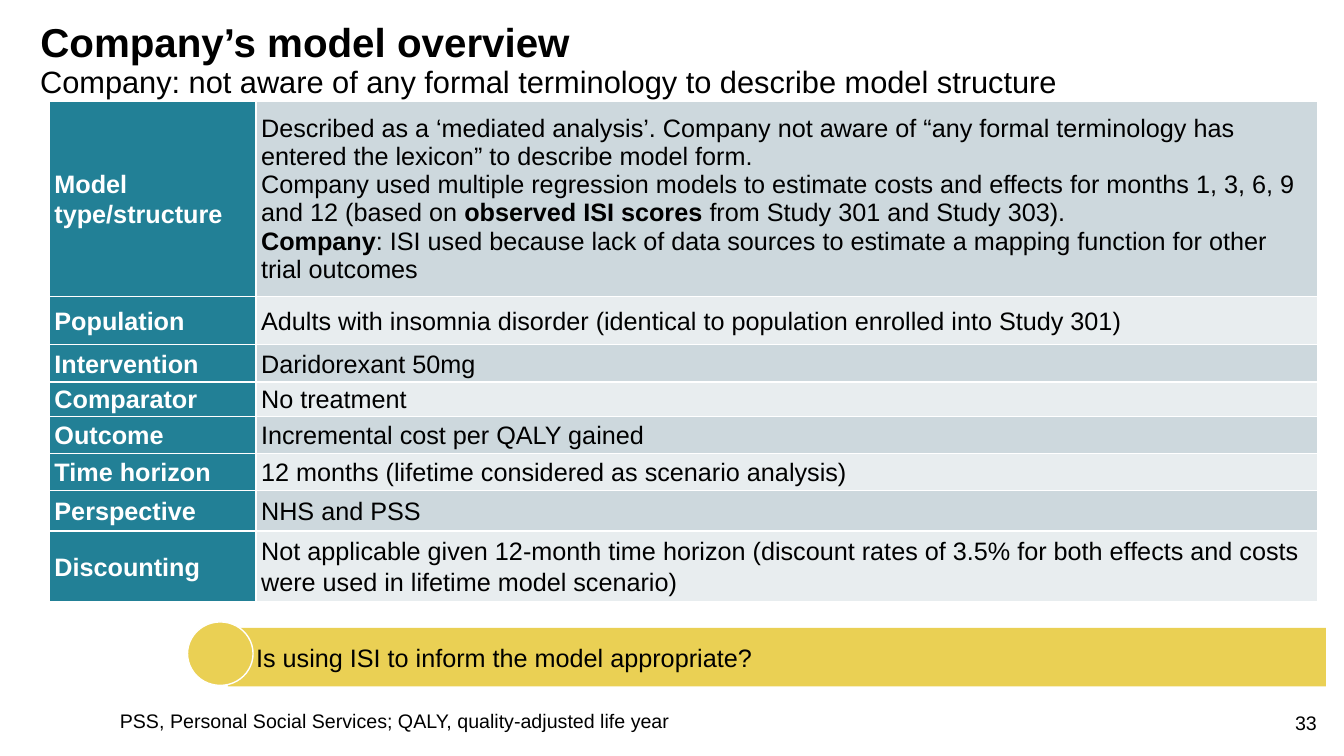
from dataclasses import dataclass

from lxml import etree
from pptx import Presentation
from pptx.dml.color import RGBColor
from pptx.enum.shapes import MSO_SHAPE
from pptx.enum.text import MSO_ANCHOR, PP_ALIGN
from pptx.oxml.ns import qn
from pptx.util import Inches, Pt

RECT, OVAL = MSO_SHAPE.RECTANGLE, MSO_SHAPE.OVAL
TOP, MIDDLE = MSO_ANCHOR.TOP, MSO_ANCHOR.MIDDLE
LEFT, RIGHT = PP_ALIGN.LEFT, PP_ALIGN.RIGHT
FONT = "Arial"
COLORS = {
    "black": "000000",
    "white": "FFFFFF",
    "teal": "228096",
    "dark": "CDD8DD",
    "light": "E8EDEF",
    "gold": "EAD054",
}


@dataclass
class Run:
    text: str
    bold: bool = False


@dataclass
class Row:
    label: str
    height: float
    paras: list[list[Run]]


@dataclass
class Label:
    text: str
    box: tuple[float, float, float, float]
    size: float
    spacing: float = 1.0
    align: PP_ALIGN = LEFT


ROWS = [
    Row("Model type/structure", 1.93, [
        [Run("Described as a ‘mediated analysis’. Company not aware of “any formal "
             "terminology has entered the lexicon” to describe model form.")],
        [Run("Company used multiple regression models to estimate costs and effects "
             "for months 1, 3, 6, 9 and 12 (based on "),
         Run("observed ISI scores ", True),
         Run("from Study 301 and Study 303).")],
        [Run("Company", True),
         Run(": ISI used because lack of data sources to estimate a mapping function "
             "for other trial outcomes")],
    ]),
    Row("Population", 0.48, [[Run(
        "Adults with insomnia disorder (identical to population enrolled into Study 301)")]]),
    Row("Intervention", 0.37, [[Run("Daridorexant 50mg")]]),
    Row("Comparator", 0.34, [[Run("No treatment")]]),
    Row("Outcome", 0.37, [[Run("Incremental cost per QALY gained")]]),
    Row("Time horizon", 0.37, [[Run("12 months (lifetime considered as scenario analysis)")]]),
    Row("Perspective", 0.4, [[Run("NHS and PSS")]]),
    Row("Discounting", 0.7, [[Run(
        "Not applicable given 12-month time horizon (discount rates of 3.5% for both "
        "effects and costs were used in lifetime model scenario)")]]),
]
WIDTHS = [2.05, 10.53]
LABELS = [
    Label("Company: not aware of any formal terminology to describe model structure",
          (0.3, 0.52, 12.3, 0.5), 22, 1.14),
    Label("PSS, Personal Social Services; QALY, quality-adjusted life year",
          (1.09, 7.01, 11.38, 0.4), 14, 0.9),
    Label("33", (12.65, 7, 0.51, 0.4), 14, align=RIGHT),
]


def color(name: str) -> RGBColor:
    return RGBColor.from_string(COLORS[name])


def add_run(para, run: Run, size: float, ink: str = "black") -> None:
    part = para.add_run()
    part.text = run.text
    font = part.font
    font.name, font.size, font.bold = FONT, Pt(size), run.bold
    font.color.rgb = color(ink)


def place(shape, box: tuple[float, float, float, float]) -> None:
    shape.left, shape.top, shape.width, shape.height = map(Inches, box)


def write(shape, label: Label, bold: bool = False) -> None:
    frame = shape.text_frame
    frame.word_wrap = True
    frame.vertical_anchor = TOP
    para = frame.paragraphs[0]
    para.alignment = label.align
    para.line_spacing = label.spacing
    para.space_before = Pt(0)
    add_run(para, Run(label.text, bold), label.size)


def add_edges(cell) -> None:
    props = cell._tc.get_or_add_tcPr()
    for spot, side in enumerate(("a:lnL", "a:lnR", "a:lnT", "a:lnB")):
        line = etree.Element(qn(side), w=str(Pt(1)))
        fill = etree.SubElement(line, qn("a:solidFill"))
        etree.SubElement(fill, qn("a:srgbClr"), val=COLORS["white"])
        props.insert(spot, line)


def fill_cell(cell, paras: list[list[Run]], back: str, ink: str) -> None:
    cell.fill.solid()
    cell.fill.fore_color.rgb = color(back)
    add_edges(cell)
    cell.vertical_anchor = MIDDLE
    cell.margin_left = cell.margin_right = Inches(0.05)
    cell.margin_top = cell.margin_bottom = 0
    frame = cell.text_frame
    for spot, runs in enumerate(paras):
        para = frame.add_paragraph() if spot else frame.paragraphs[0]
        if len(paras) == 1:
            para.line_spacing = 1.07
            para.space_after = Pt(8)
        for run in runs:
            add_run(para, run, 18, ink)


def add_grid(slide) -> None:
    height = sum(row.height for row in ROWS)
    table = slide.shapes.add_table(
        len(ROWS), len(WIDTHS), Inches(0.49), Inches(1.01),
        Inches(sum(WIDTHS)), Inches(height)).table
    for column, width in zip(table.columns, WIDTHS):
        column.width = Inches(width)
    for spot, row in enumerate(ROWS):
        table.rows[spot].height = Inches(row.height)
        fill_cell(table.cell(spot, 0), [[Run(row.label, True)]], "teal", "white")
        fill_cell(table.cell(spot, 1), row.paras, "light" if spot % 2 else "dark", "black")


def add_gold(slide, kind: MSO_SHAPE, box: tuple[float, float, float, float]):
    shape = slide.shapes.add_shape(kind, *map(Inches, box))
    shape.shadow.inherit = False
    shape.fill.solid()
    shape.fill.fore_color.rgb = color("gold")
    return shape


def add_banner(slide) -> None:
    bar = add_gold(slide, RECT, (2.26, 6.23, 10.89, 0.58))
    bar.line.fill.background()
    frame = bar.text_frame
    frame.word_wrap = True
    frame.vertical_anchor = MIDDLE
    frame.margin_left = Inches(0.28)
    para = frame.paragraphs[0]
    para.alignment = LEFT
    add_run(para, Run("Is using ISI to inform the model appropriate?"), 18)
    disc = add_gold(slide, OVAL, (1.86, 6.17, 0.65, 0.63))
    disc.line.color.rgb = color("white")
    disc.line.width = Pt(1)


def main() -> None:
    deck = Presentation()
    deck.slide_width, deck.slide_height = Inches(13.33), Inches(7.5)
    slide = deck.slides.add_slide(deck.slide_layouts[5])
    head = Label("Company’s model overview", (0.3, 0.17, 12.3, 0.65), 28.8, 0.9)
    title = slide.shapes.title
    place(title, head.box)
    write(title, head, True)
    add_grid(slide)
    for label in LABELS:
        write(slide.shapes.add_textbox(*map(Inches, label.box)), label)
    add_banner(slide)
    deck.save("out.pptx")


if __name__ == "__main__":
    main()
